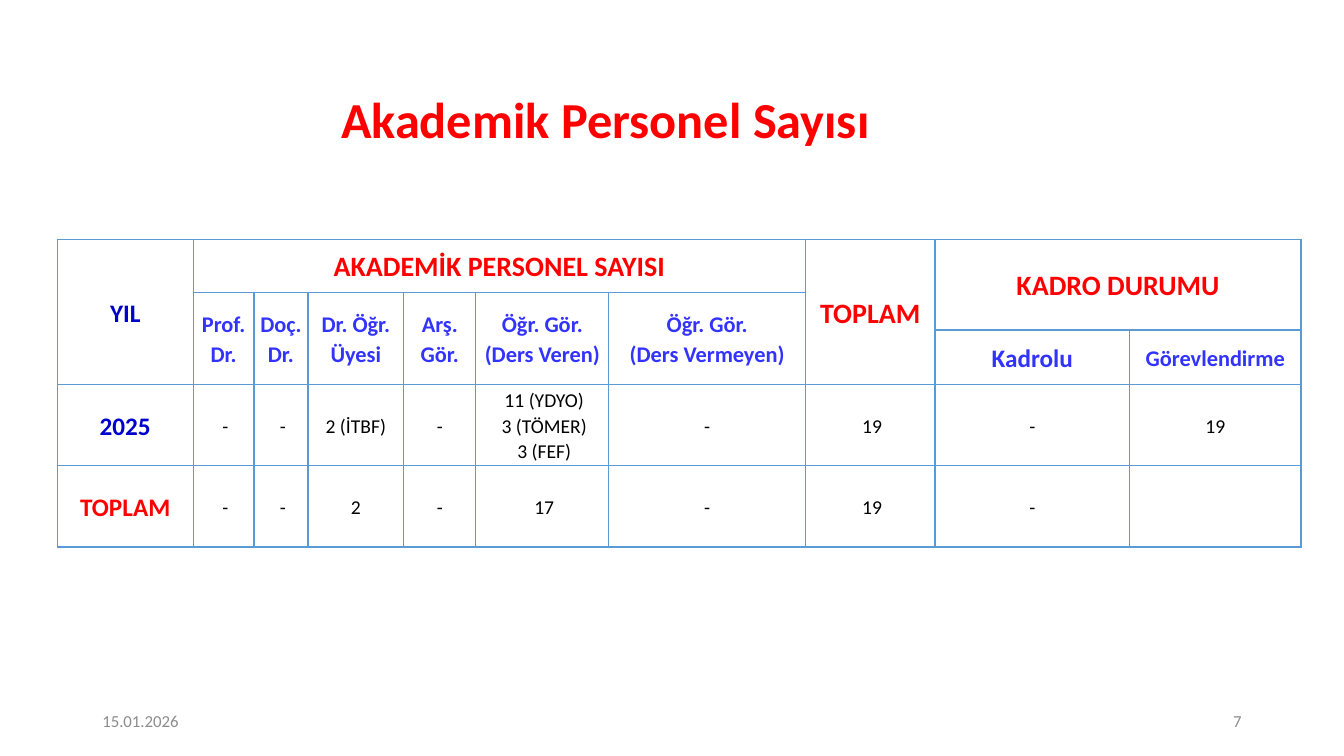
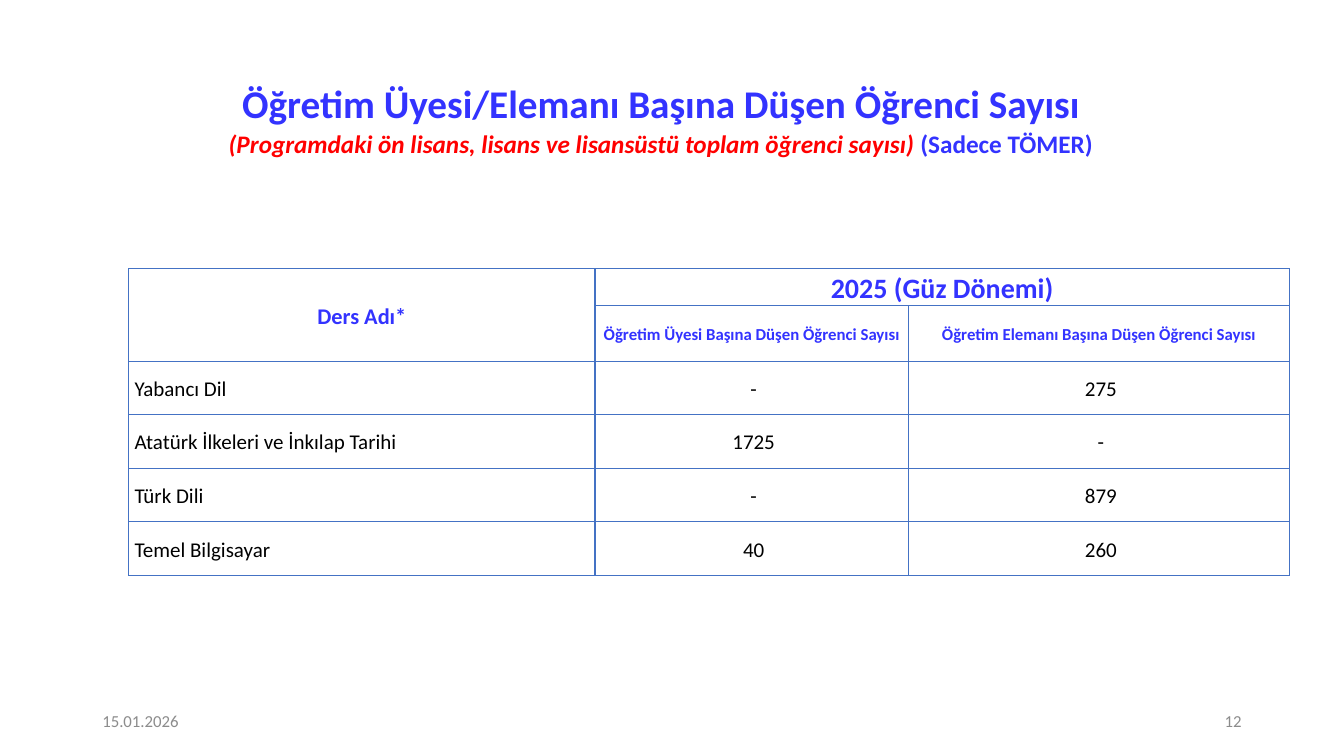
from collections import namedtuple

from lxml.etree import SubElement
from pptx import Presentation
from pptx.dml.color import RGBColor
from pptx.enum.text import MSO_ANCHOR, MSO_AUTO_SIZE, PP_ALIGN
from pptx.oxml.ns import qn
from pptx.util import Pt

FONT = "Calibri"
COLORS = {
    "red": "FF0000",
    "blue": "3333FF",
    "navy": "0000CC",
    "black": "000000",
    "gray": "8C8C8C",
    "staff_border": "5B9BD5",
    "ratio_border": "4472C4",
}
DATE = "15.01.2026"
LINE_SPACING = 1.07
NUDGE = 3.4

Box = namedtuple("Box", "left top width height")
Style = namedtuple("Style", "size color bold italic", defaults=(False, False))
Header = namedtuple("Header", "row column row_span column_span text style")

FOOTER_BOX = Box(66, 500.4, 828, 28.8)
FOOTER_PART_WIDTH = 216
FOOTER_STYLE = Style(12, "gray")
TITLE_ONLY_LAYOUT = 5


def style_font(font, style):
    font.name = FONT
    font.size = Pt(style.size)
    font.bold = style.bold
    font.italic = style.italic
    font.color.rgb = RGBColor.from_string(COLORS[style.color])


def add_title(slide, box, lines, line_spacing):
    title = slide.shapes.title
    title.left, title.top, title.width, title.height = map(Pt, box)
    frame = title.text_frame
    frame.word_wrap = True
    frame.auto_size = MSO_AUTO_SIZE.NONE
    frame.vertical_anchor = MSO_ANCHOR.MIDDLE
    paragraph = frame.paragraphs[0]
    paragraph.alignment = PP_ALIGN.CENTER
    paragraph.line_spacing = line_spacing
    for index, line in enumerate(lines):
        if index:
            paragraph.add_line_break()
        for text, style in line:
            run = paragraph.add_run()
            run.text = text
            style_font(run.font, style)


def add_footer(slide, box, number):
    right_part = box.left + box.width - FOOTER_PART_WIDTH
    parts = (
        (box.left, DATE, PP_ALIGN.LEFT),
        (right_part, str(number), PP_ALIGN.RIGHT),
    )
    for left, text, alignment in parts:
        shape = slide.shapes.add_textbox(
            Pt(left), Pt(box.top), Pt(FOOTER_PART_WIDTH), Pt(box.height)
        )
        frame = shape.text_frame
        frame.word_wrap = True
        frame.vertical_anchor = MSO_ANCHOR.MIDDLE
        paragraph = frame.paragraphs[0]
        paragraph.text = text
        paragraph.alignment = alignment
        style_font(paragraph.font, FOOTER_STYLE)


def format_cell(cell, border):
    properties = cell._tc.get_or_add_tcPr()
    for side in ("lnL", "lnR", "lnT", "lnB"):
        line = SubElement(properties, qn(f"a:{side}"), w=str(Pt(1)))
        fill = SubElement(line, qn("a:solidFill"))
        SubElement(fill, qn("a:srgbClr"), val=COLORS[border])
    cell.fill.background()
    cell.vertical_anchor = MSO_ANCHOR.MIDDLE
    cell.margin_left = cell.margin_right = cell.margin_top = Pt(0.7)
    cell.margin_bottom = Pt(0)


def write_cell(cell, text, style, alignment=PP_ALIGN.CENTER):
    cell.text = text
    for paragraph in cell.text_frame.paragraphs:
        paragraph.alignment = alignment
        paragraph.line_spacing = LINE_SPACING
        style_font(paragraph.font, style)


def add_grid(slide, box, widths, heights, border, headers):
    table = slide.shapes.add_table(
        len(heights), len(widths), *map(Pt, box)
    ).table
    table.first_row = False
    table.horz_banding = False
    for column, width in zip(table.columns, widths):
        column.width = Pt(width)
    for row, height in zip(table.rows, heights):
        row.height = Pt(height)
    for cell in table.iter_cells():
        format_cell(cell, border)
    for header in headers:
        cell = table.cell(header.row, header.column)
        last_row = header.row + header.row_span - 1
        last_column = header.column + header.column_span - 1
        if (last_row, last_column) != (header.row, header.column):
            cell.merge(table.cell(last_row, last_column))
        write_cell(cell, header.text, header.style)
    return table


def add_staff_table(slide, box):
    group = Style(20, "red", True)
    rank = Style(16, "blue", True)
    ranks = (
        "Prof. Dr.",
        "Doç. Dr.",
        "Dr. Öğr. Üyesi",
        "Arş. Gör.",
        "Öğr. Gör.\n(Ders Veren)",
        "Öğr. Gör.\n(Ders Vermeyen)",
    )
    headers = [
        Header(0, 0, 3, 1, "YIL", Style(18, "navy", True)),
        Header(0, 1, 1, 6, "AKADEMİK PERSONEL SAYISI", group),
        Header(0, 7, 3, 1, "TOPLAM", group),
        Header(0, 8, 2, 2, "KADRO DURUMU", group),
        Header(2, 8, 1, 1, "Kadrolu", Style(18, "blue", True)),
        Header(2, 9, 1, 1, "Görevlendirme", rank),
    ]
    headers += [
        Header(1, column, 2, 1, text, rank)
        for column, text in enumerate(ranks, 1)
    ]
    widths = (97, 43.5, 38.5, 68.5, 51.5, 95, 140.5, 92.5, 139, 122.5)
    heights = (38, 27, 39, 58, 58)
    table = add_grid(slide, box, widths, heights, "staff_border", headers)

    rows = (
        ("2025", "navy", ("-", "-", "2 (İTBF)", "-",
                          "11 (YDYO)\n3 (TÖMER)\n3 (FEF)", "-", "19", "-", "19")),
        ("TOPLAM", "red", ("-", "-", "2", "-", "17", "-", "19", "-", "")),
    )
    nudged_columns = (1, 2, 5, 7)
    for row, (label, color, values) in enumerate(rows, 3):
        write_cell(table.cell(row, 0), label, Style(18, color, True))
        for column, value in enumerate(values, 1):
            cell = table.cell(row, column)
            write_cell(cell, value, Style(14, "black"))
            if column in nudged_columns:
                cell.margin_left = Pt(NUDGE)


def add_ratio_table(slide, box):
    measure = Style(12, "blue", True)
    headers = (
        Header(0, 0, 2, 1, "Ders Adı*", Style(16, "blue", True)),
        Header(0, 1, 1, 2, "2025 (Güz Dönemi)", Style(20, "blue", True)),
        Header(1, 1, 1, 1, "Öğretim Üyesi Başına Düşen Öğrenci Sayısı", measure),
        Header(1, 2, 1, 1, "Öğretim Elemanı Başına Düşen Öğrenci Sayısı", measure),
    )
    widths = (333, 224, 272)
    heights = (26.5, 39.5) + (38.25,) * 4
    table = add_grid(slide, box, widths, heights, "ratio_border", headers)

    courses = (
        ("Yabancı Dil", "-", "275"),
        ("Atatürk İlkeleri ve İnkılap Tarihi", "1725", "-"),
        ("Türk Dili", "-", "879"),
        ("Temel Bilgisayar", "40", "260"),
    )
    for row, values in enumerate(courses, 2):
        for column, value in enumerate(values):
            cell = table.cell(row, column)
            alignment = PP_ALIGN.CENTER if column else PP_ALIGN.LEFT
            write_cell(cell, value, Style(15, "black"), alignment)
            cell.margin_left = Pt(NUDGE if column else NUDGE + 0.7)


def add_slide(presentation, number):
    layout = presentation.slide_layouts[TITLE_ONLY_LAYOUT]
    slide = presentation.slides.add_slide(layout)
    add_footer(slide, FOOTER_BOX, number)
    return slide


def build_staff_slide(presentation):
    slide = add_slide(presentation, 7)
    lines = [[("Akademik Personel Sayısı", Style(36, "red", True))]]
    add_title(slide, Box(26.5, 60, 812, 54.5), lines, 0.9)
    add_staff_table(slide, Box(41, 170.8, 888, 220))


def build_ratio_slide(presentation):
    slide = add_slide(presentation, 12)
    lines = [
        [("Öğretim Üyesi/Elemanı Başına Düşen Öğrenci Sayısı",
          Style(28, "blue", True))],
        [("(Programdaki ön lisans, lisans ve lisansüstü toplam öğrenci sayısı) ",
          Style(18, "red", True, True)),
         ("(Sadece TÖMER)", Style(18, "blue", True))],
    ]
    add_title(slide, Box(25.5, 51, 893, 66), lines, LINE_SPACING)
    add_ratio_table(slide, Box(92, 192, 829, 219))


def main():
    presentation = Presentation()
    presentation.slide_width = Pt(960)
    presentation.slide_height = Pt(540)
    build_staff_slide(presentation)
    build_ratio_slide(presentation)
    presentation.save("out.pptx")


if __name__ == "__main__":
    main()
